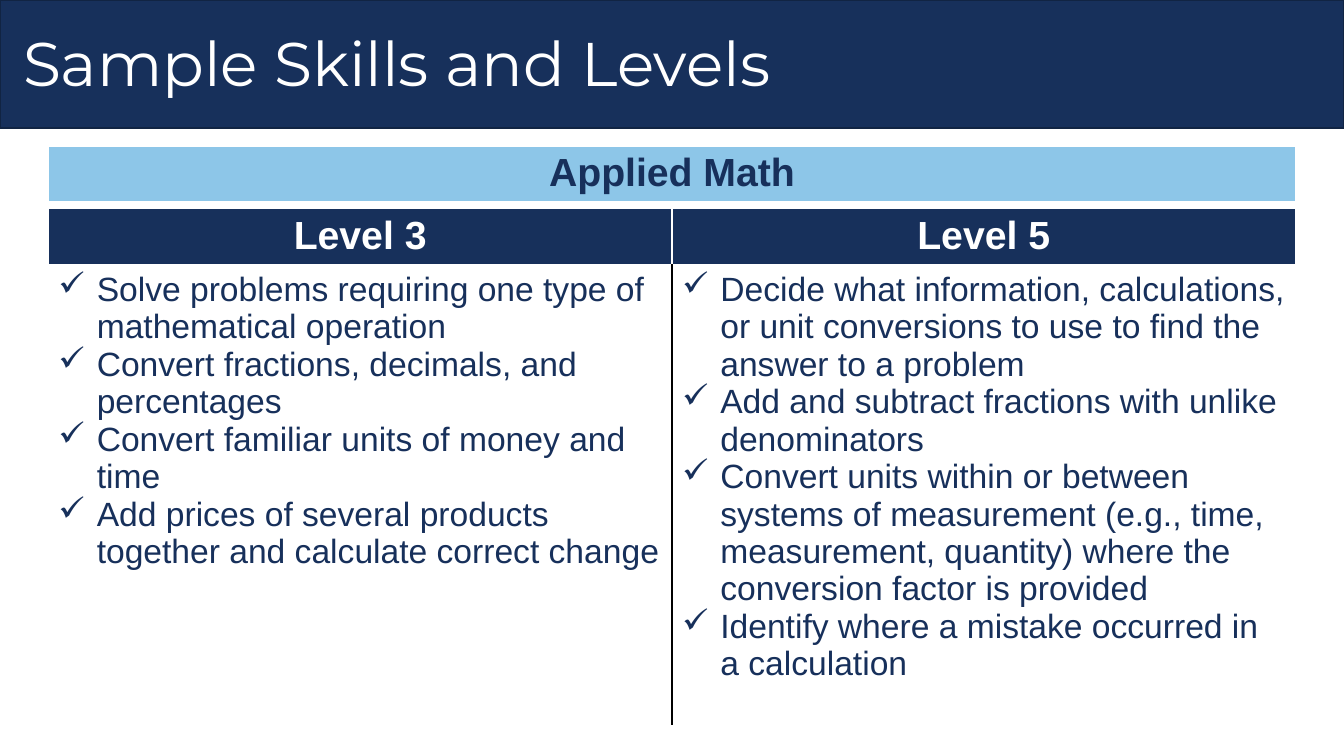
from dataclasses import dataclass

import pptx
import pptx.dml.color
import pptx.enum.shapes
import pptx.enum.text
import pptx.oxml
import pptx.oxml.ns
import pptx.util
from pptx.util import Inches, Pt


@dataclass(frozen=True)
class Theme:
    navy: str = "17305B"
    navy_edge: str = "112443"
    sky: str = "8DC6E8"
    white: str = "FFFFFF"
    black: str = "000000"
    title_font: str = "Montserrat"
    body_font: str = "Arial"
    title_size: int = 44
    heading_size: int = 28
    skill_size: int = 24


theme = Theme()
rgb = pptx.dml.color.RGBColor.from_string
center = pptx.enum.text.PP_ALIGN.CENTER

title = "Sample Skills and Levels"
subject = "Applied Math"
levels = {
    "Level 3": [
        "Solve problems requiring one type of mathematical operation",
        "Convert fractions, decimals, and percentages",
        "Convert familiar units of money and time",
        "Add prices of several products together and calculate correct change",
    ],
    "Level 5": [
        "Decide what information, calculations, or unit conversions to use to find the answer to a problem",
        "Add and subtract fractions with unlike denominators",
        "Convert units within or between systems of measurement (e.g., time, measurement, quantity) "
        "where the conversion factor is provided",
        "Identify where a mistake occurred in a calculation",
    ],
}

table_left, table_width = Inches(0.48), Inches(12.37)
heading_height, skills_height = Inches(0.55), Inches(4.55)


def set_borders(cell, bottom=1, **colours):
    """Draw white borders, except for the sides (L, R, T, B) given a colour."""
    properties = cell._tc.get_or_add_tcPr()
    for side in "LRTB":
        width = Pt(bottom if side == "B" else 1)
        properties.append(pptx.oxml.parse_xml(
            f'<a:ln{side} {pptx.oxml.ns.nsdecls("a")} w="{width}"><a:solidFill>'
            f'<a:srgbClr val="{colours.get(side, theme.white)}"/></a:solidFill></a:ln{side}>'))


def fill_heading(cell, text, fill, colour):
    set_borders(cell, bottom=3)
    cell.fill.solid()
    cell.fill.fore_color.rgb = rgb(fill)
    cell.text_frame.text = text
    paragraph = cell.text_frame.paragraphs[0]
    paragraph.alignment = center
    font = paragraph.runs[0].font
    font.name, font.size, font.bold = theme.body_font, Pt(theme.heading_size), True
    font.color.rgb = rgb(colour)


presentation = pptx.Presentation()
presentation.slide_width, presentation.slide_height = Inches(13.33), Inches(7.5)
slide = presentation.slides.add_slide(presentation.slide_layouts[6])

# Title band
band = slide.shapes.add_shape(
    pptx.enum.shapes.MSO_SHAPE.RECTANGLE, 0, 0, presentation.slide_width, Inches(1.27))
band.shadow.inherit = False
band.fill.solid()
band.fill.fore_color.rgb = rgb(theme.navy)
band.line.color.rgb = rgb(theme.navy_edge)
band.line.width = Pt(1)

heading = slide.shapes.add_textbox(Inches(0.13), Inches(0.08), Inches(9.69), Inches(1.16)).text_frame
heading.word_wrap = True
heading.vertical_anchor = pptx.enum.text.MSO_ANCHOR.MIDDLE
heading.text = title
heading.paragraphs[0].line_spacing = 0.9
title_font = heading.paragraphs[0].runs[0].font
title_font.name, title_font.size = theme.title_font, Pt(theme.title_size)
title_font.color.rgb = rgb(theme.white)

# Skills by level
skills_table = slide.shapes.add_table(
    2, len(levels), table_left, Inches(2.07), table_width, heading_height + skills_height).table
skills_table.rows[0].height = heading_height
skills_table.rows[1].height = skills_height

for column, (level, skills) in enumerate(levels.items()):
    fill_heading(skills_table.cell(0, column), level, theme.navy, theme.white)

    skills_cell = skills_table.cell(1, column)
    divider_side = "R" if column == 0 else "L"
    set_borders(skills_cell, **{divider_side: theme.black})
    skills_cell.fill.background()
    skills_cell.text_frame.text = "\n".join(skills)
    for skill in skills_cell.text_frame.paragraphs:
        indent = skill._p.get_or_add_pPr()
        indent.set("marL", str(Inches(0.38)))
        indent.set("indent", str(-Inches(0.38)))
        indent.append(pptx.oxml.parse_xml(f'<a:buChar {pptx.oxml.ns.nsdecls("a")} char="✓"/>'))
        font = skill.runs[0].font
        font.name, font.size, font.bold = theme.body_font, Pt(theme.skill_size), False
        font.color.rgb = rgb(theme.navy)

# Subject banner
subject_table = slide.shapes.add_table(
    1, 1, table_left, Inches(1.45), table_width, heading_height).table
fill_heading(subject_table.cell(0, 0), subject, theme.sky, theme.navy)

presentation.save("out.pptx")
